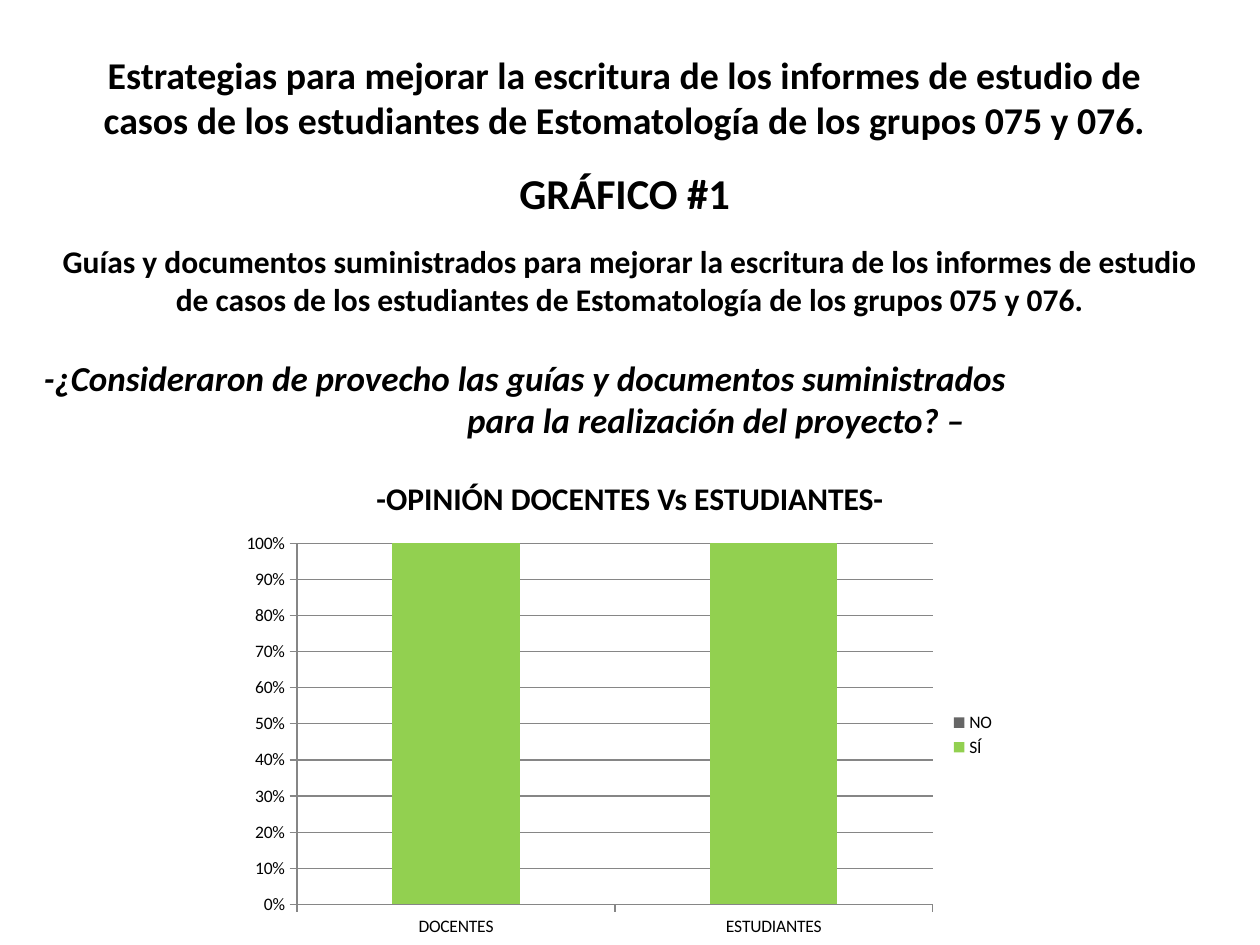
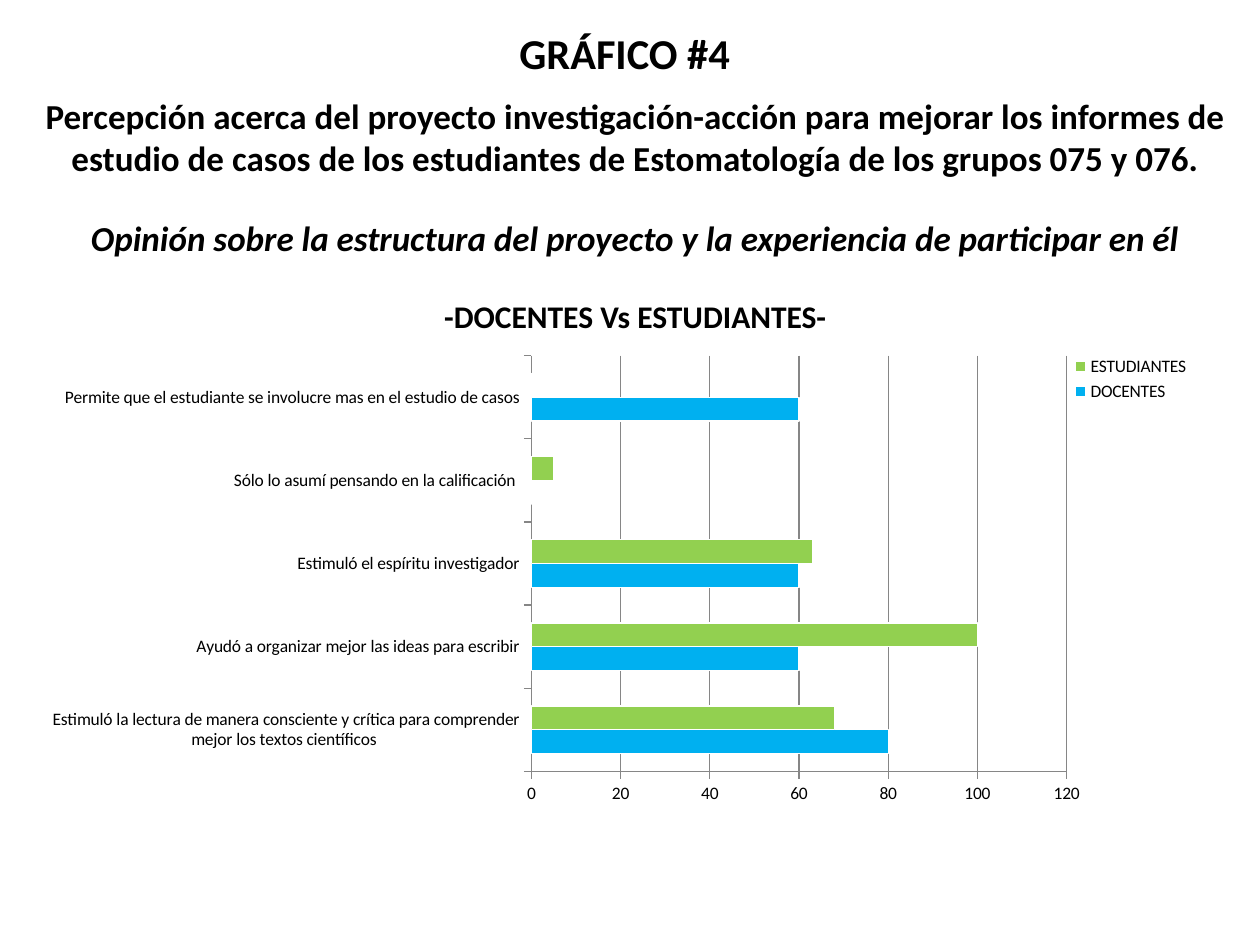
from lxml.etree import SubElement
from pptx import Presentation
from pptx.chart.data import CategoryChartData
from pptx.dml.color import RGBColor
from pptx.enum.chart import XL_CHART_TYPE, XL_LEGEND_POSITION, XL_TICK_MARK
from pptx.enum.text import MSO_ANCHOR, PP_ALIGN
from pptx.oxml.ns import qn
from pptx.util import Inches, Pt

COLORS = {
    "text": "000000", "paper": "FFFFFF", "axis": "868686",
    "green": "92D050", "blue": "00B0F0", "gray": "666666",
}
FONT = "Calibri"
CELL = Inches(10) // 120

HEADING = {"size": 24.3}
PROJECT = {"size": 21.6, "after": 14}
SUBJECT = {"size": 18, "after": 22}
SUBJECT_LARGE = {"size": 20, "after": 22}
QUESTION = {"size": 20, "italic": True, "after": 22}
QUESTION_START = {"size": 20, "italic": True, "align": PP_ALIGN.LEFT}
QUESTION_END = {**QUESTION, "align": PP_ALIGN.LEFT, "indent": 3.36}
CHART_HEADING = {"size": 18}


def color(name):
    return RGBColor.from_string(COLORS[name])


def grid_box(columns_and_rows):
    return [round(CELL * count) for count in columns_and_rows]


def style_font(font, **values):
    font.color.rgb = color("text")
    for name, value in {"name": FONT, **values}.items():
        setattr(font, name, value)


def style_line(line, line_color, width=0.75):
    line.color.rgb = color(line_color)
    line.width = Pt(width)


def add_text(slide, box, lines, anchor=MSO_ANCHOR.TOP, top_inset=0.05):
    frame = slide.shapes.add_textbox(*grid_box(box)).text_frame
    settings = {"word_wrap": True, "vertical_anchor": anchor, "margin_top": Inches(top_inset)}
    for name, value in settings.items():
        setattr(frame, name, value)
    for index, (text, style) in enumerate(lines):
        paragraph = frame.paragraphs[0] if index == 0 else frame.add_paragraph()
        paragraph.alignment = style.get("align", PP_ALIGN.CENTER)
        paragraph.space_after = Pt(style.get("after", 0))
        if "indent" in style:
            paragraph._p.get_or_add_pPr().set("marL", str(Inches(style["indent"])))
        run = paragraph.add_run()
        run.text = text
        style_font(run.font, size=Pt(style["size"]), bold=True, italic=style.get("italic", False))


def set_layout(parent, position, shares, inner=False):
    layout = parent.find(qn("c:layout"))
    if layout is not None:
        parent.remove(layout)
    layout = SubElement(parent, qn("c:layout"))
    parent.insert(position, layout)
    manual = SubElement(layout, qn("c:manualLayout"))
    values = {"xMode": "edge", "yMode": "edge", **dict(zip("xywh", shares))}
    if inner:
        values = {"layoutTarget": "inner", **values}
    for name, value in values.items():
        SubElement(manual, qn(f"c:{name}")).set("val", str(value))


def add_opinion_chart(slide, box, chart_type, categories, series, number_format, top, step):
    data = CategoryChartData()
    data.categories = categories
    for name, values, _ in series:
        data.add_series(name, values)
    chart = slide.shapes.add_chart(chart_type, *grid_box(box), data).chart
    style_font(chart.font, size=Pt(10))
    chart.has_title = False
    chart.has_legend = True
    chart.legend.position = XL_LEGEND_POSITION.RIGHT
    chart.legend.include_in_layout = False

    plot = chart.plots[0]
    plot.vary_by_categories = False
    plot.gap_width = 150
    for bars, (_, _, fill) in zip(plot.series, series):
        bars.format.fill.solid()
        bars.format.fill.fore_color.rgb = color(fill)

    for axis in (chart.category_axis, chart.value_axis):
        axis.major_tick_mark = XL_TICK_MARK.OUTSIDE
        axis.minor_tick_mark = XL_TICK_MARK.NONE
        style_line(axis.format.line, "axis")
    chart.category_axis.has_major_gridlines = False
    value_axis = chart.value_axis
    value_axis.has_major_gridlines = True
    style_line(value_axis.major_gridlines.format.line, "axis")
    scale = {"minimum_scale": 0, "maximum_scale": top, "major_unit": step}
    for name, value in scale.items():
        setattr(value_axis, name, value)
    value_axis.tick_labels.number_format = number_format
    value_axis.tick_labels.number_format_is_linked = False
    return chart


def build_guides_slide(slide):
    add_text(slide, (5, 0, 109, 23), [
        ("Estrategias para mejorar la escritura de los informes de estudio de casos "
         "de los estudiantes de Estomatología de los grupos 075 y 076.", PROJECT),
        ("GRÁFICO #1", HEADING),
    ], top_inset=0.41)
    add_text(slide, (3, 22.5, 114, 27.5), [
        ("Guías y documentos suministrados para mejorar la escritura de los informes de estudio "
         "de casos de los estudiantes de Estomatología de los grupos 075 y 076.", SUBJECT),
        ("-¿Consideraron de provecho las guías y documentos suministrados", QUESTION_START),
        ("para la realización del proyecto? –", QUESTION_END),
        ("-OPINIÓN DOCENTES Vs ESTUDIANTES-", CHART_HEADING),
    ])
    chart = add_opinion_chart(
        slide, (22, 50, 74, 40), XL_CHART_TYPE.COLUMN_STACKED_100,
        ["DOCENTES", "ESTUDIANTES"],
        [("SÍ", (100, 100), "green"), ("NO", (0, 0), "gray")],
        "0%", 1, 0.1)
    chart.plots[0].overlap = 100


def build_perception_slide(slide):
    add_text(slide, (5, 1, 109, 8), [("GRÁFICO #4", HEADING)], MSO_ANCHOR.MIDDLE)
    add_text(slide, (3, 8.4, 115, 27.8), [
        ("Percepción acerca del proyecto investigación-acción para mejorar los informes de "
         "estudio de casos de los estudiantes de Estomatología de los grupos 075 y 076.",
         SUBJECT_LARGE),
        ("Opinión sobre la estructura del proyecto y la experiencia de participar en él", QUESTION),
        ("-DOCENTES Vs ESTUDIANTES-", CHART_HEADING),
    ])
    chart = add_opinion_chart(
        slide, (5, 33, 111, 44), XL_CHART_TYPE.BAR_CLUSTERED,
        ["Estimuló la lectura de manera consciente y crítica para comprender "
         "mejor los textos científicos ",
         "Ayudó a organizar mejor las ideas para escribir",
         "Estimuló el espíritu investigador",
         "Sólo lo asumí pensando en la calificación ",
         "Permite que el estudiante se involucre mas en el estudio de casos"],
        [("DOCENTES", (80, 60, 60, 0, 60), "blue"),
         ("ESTUDIANTES", (68, 100, 63, 5, 0), "green")],
        "General", 120, 20)
    for bars in chart.plots[0].series:
        style_line(bars.format.line, "paper")
    set_layout(chart._chartSpace.find(".//" + qn("c:plotArea")), 0,
               (0.41, 0.02, 0.46, 0.9), inner=True)
    set_layout(chart._chartSpace.find(".//" + qn("c:legend")), 1, (0.87, 0.01, 0.11, 0.12))


def main():
    presentation = Presentation()
    presentation.slide_width = CELL * 120
    presentation.slide_height = CELL * 90
    for build in (build_guides_slide, build_perception_slide):
        slide = presentation.slides.add_slide(presentation.slide_layouts[6])
        slide.background.fill.solid()
        slide.background.fill.fore_color.rgb = color("paper")
        build(slide)
    presentation.save("out.pptx")


if __name__ == "__main__":
    main()
